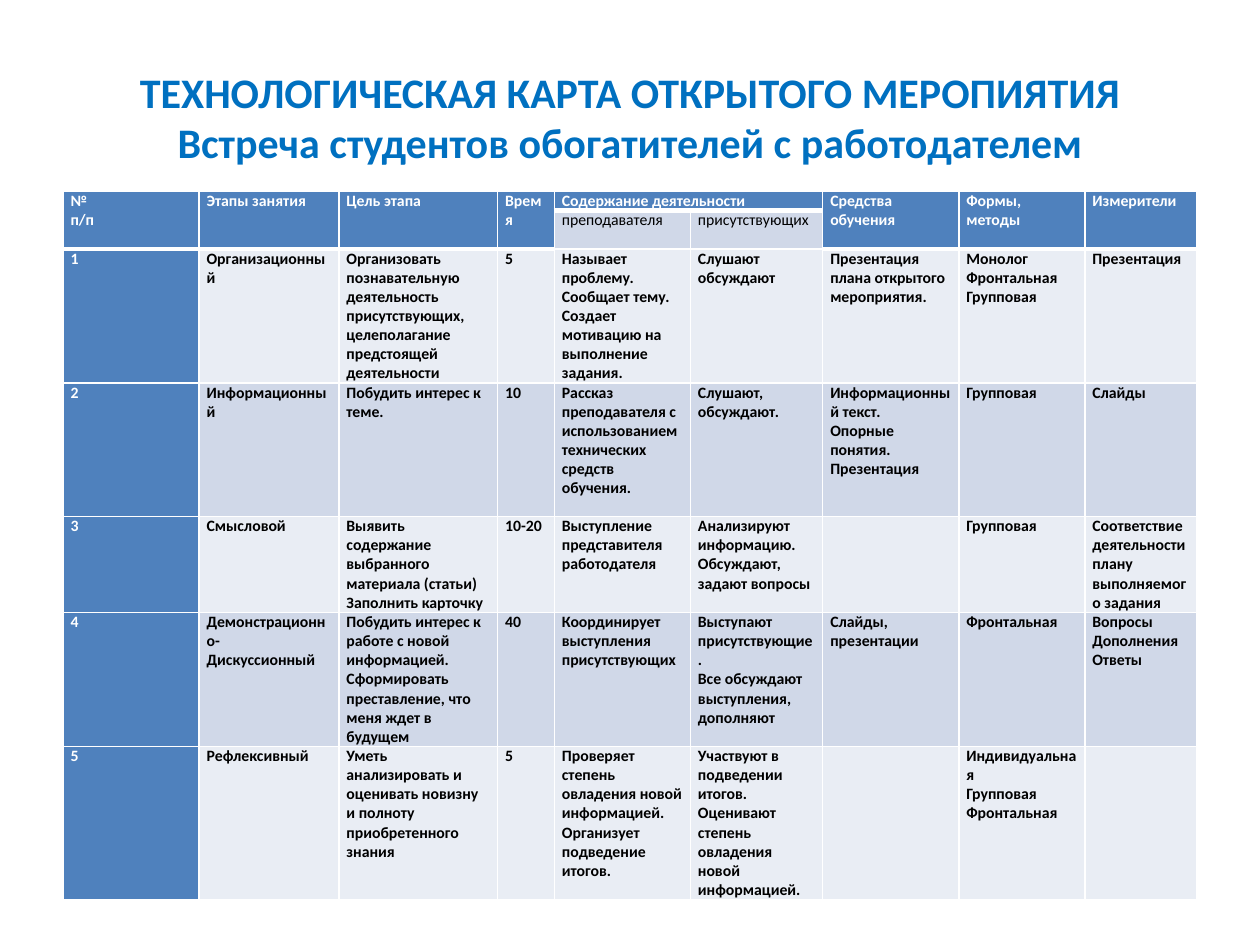
import pptx
import pptx.dml.color
import pptx.enum.text
import pptx.oxml
import pptx.oxml.ns
import pptx.util
from pptx.util import Inches

TITLE = ("ТЕХНОЛОГИЧЕСКАЯ КАРТА ОТКРЫТОГО МЕРОПИЯТИЯ "
         "Встреча студентов обогатителей с работодателем")

# Line breaks separate paragraphs inside a cell.
HEADERS = ["№\nп/п", "Этапы занятия", "Цель этапа", "Время", "Содержание деятельности",
           "", "Средства\nобучения", "Формы,\nметоды", "Измерители"]
ACTIVITY_HEADERS = {4: "преподавателя", 5: "присутствующих"}
STAGES = [
    ["1", "Организационный",
     "Организовать познавательную деятельность присутствующих, целеполагание "
     "предстоящей деятельности",
     "5",
     "Называет проблему.\nСообщает тему.\nСоздает мотивацию на выполнение задания.",
     "Слушают\nобсуждают", "Презентация плана открытого мероприятия.",
     "Монолог\nФронтальная\nГрупповая", "Презентация"],
    ["2", "Информационный", "Побудить интерес к теме.", "10",
     "Рассказ преподавателя с использованием технических средств обучения.",
     "Слушают, обсуждают.",
     "Информационный текст.\nОпорные понятия.\nПрезентация", "Групповая", "Слайды"],
    ["3", "Смысловой",
     "Выявить содержание выбранного материала (статьи)\nЗаполнить карточку", "10-20",
     "Выступление представителя работодателя",
     "Анализируют информацию.\nОбсуждают, задают вопросы", "", "Групповая",
     "Соответствие деятельности плану выполняемого задания"],
    ["4", "Демонстрационно-\nДискуссионный",
     "Побудить интерес к работе с новой информацией.\n"
     "Сформировать преставление, что меня ждет в будущем",
     "40", "Координирует выступления присутствующих",
     "Выступают присутствующие.\nВсе обсуждают выступления, дополняют",
     "Слайды, презентации", "Фронтальная", "Вопросы\nДополнения\nОтветы"],
    ["5", "Рефлексивный",
     "Уметь анализировать и оценивать новизну и полноту приобретенного знания", "5",
     "Проверяет степень овладения новой информацией.\nОрганизует подведение итогов.",
     "Участвуют в подведении итогов.\nОценивают степень овладения новой информацией.",
     "", "Индивидуальная\nГрупповая\nФронтальная", ""],
]

COLUMN_WIDTHS = [1.08, 1.11, 1.26, 0.45, 1.08, 1.05, 1.08, 1, 0.89]
ROW_HEIGHTS = [0.15, 0.3, 1.06, 1.06, 0.76, 1.06, 1.21]
WHITE, BLACK, HEADING_BLUE, HEADER_FILL = "FFFFFF", "000000", "0070C0", "4F81BD"
DARK_BAND, LIGHT_BAND = "D0D8E8", "E9EDF4"


def rgb(hex_color):
    return pptx.dml.color.RGBColor.from_string(hex_color)


def write(frame, text, size=9, color=BLACK, bold=True, align=None):
    for number, line in enumerate(text.split("\n")):
        paragraph = frame.add_paragraph() if number else frame.paragraphs[0]
        paragraph.alignment = align
        run = paragraph.add_run()
        run.text = line
        run.font.name = "Calibri"
        run.font.size = pptx.util.Pt(size)
        run.font.bold = bold
        run.font.color.rgb = rgb(color)


def set_borders(cell, top, bottom):
    """Draw white cell edges, 1 pt at the sides and the given points above and below."""
    properties = cell._tc.get_or_add_tcPr()
    for edge, points in (("L", 1), ("R", 1), ("T", top), ("B", bottom)):
        properties.append(pptx.oxml.parse_xml(
            f'<a:ln{edge} {pptx.oxml.ns.nsdecls("a")} w="{points * 12700}"><a:solidFill>'
            f'<a:srgbClr val="{WHITE}"/></a:solidFill></a:ln{edge}>'))


def cell_colors(row, column):
    """Return the fill and the font colour of a cell."""
    is_subheader = row == 1 and column in ACTIVITY_HEADERS
    if row == 0 or column == 0 or (row == 1 and not is_subheader):
        return HEADER_FILL, WHITE
    return (DARK_BAND if row % 2 else LIGHT_BAND), BLACK


def add_stage_table(slide):
    rows = [HEADERS, [ACTIVITY_HEADERS.get(c, "") for c in range(len(HEADERS))], *STAGES]
    table = slide.shapes.add_table(
        len(rows), len(HEADERS), Inches(0.5), Inches(1.52),
        Inches(sum(COLUMN_WIDTHS)), Inches(sum(ROW_HEIGHTS))).table
    for column, width in zip(table.columns, COLUMN_WIDTHS):
        column.width = Inches(width)
    for row, height in zip(table.rows, ROW_HEIGHTS):
        row.height = Inches(height)

    for r, texts in enumerate(rows):
        for c, text in enumerate(texts):
            cell = table.cell(r, c)
            cell.margin_left = cell.margin_right = Inches(0.06)
            cell.margin_top = cell.margin_bottom = 0
            header_end = 0 if c in ACTIVITY_HEADERS else 1
            set_borders(cell, top=3 if r == header_end + 1 else 1,
                        bottom=3 if r in (0, header_end) else 1)
            fill, font_color = cell_colors(r, c)
            cell.fill.solid()
            cell.fill.fore_color.rgb = rgb(fill)
            if text:
                write(cell.text_frame, text, color=font_color, bold=r != 1)

    table.cell(0, min(ACTIVITY_HEADERS)).merge(table.cell(0, max(ACTIVITY_HEADERS)))
    for c in range(len(HEADERS)):
        if c not in ACTIVITY_HEADERS:
            table.cell(0, c).merge(table.cell(1, c))


def main():
    presentation = pptx.Presentation()
    presentation.slide_width, presentation.slide_height = Inches(10), Inches(7.5)
    slide = presentation.slides.add_slide(presentation.slide_layouts[5])

    heading = slide.shapes.title
    heading.left, heading.top = Inches(0.5), Inches(0.3)
    heading.width, heading.height = Inches(9), Inches(1.25)
    heading.text_frame.word_wrap = True
    heading.text_frame.vertical_anchor = pptx.enum.text.MSO_ANCHOR.MIDDLE
    write(heading.text_frame, TITLE, size=24, color=HEADING_BLUE,
          align=pptx.enum.text.PP_ALIGN.CENTER)

    add_stage_table(slide)
    presentation.save("out.pptx")


if __name__ == "__main__":
    main()
